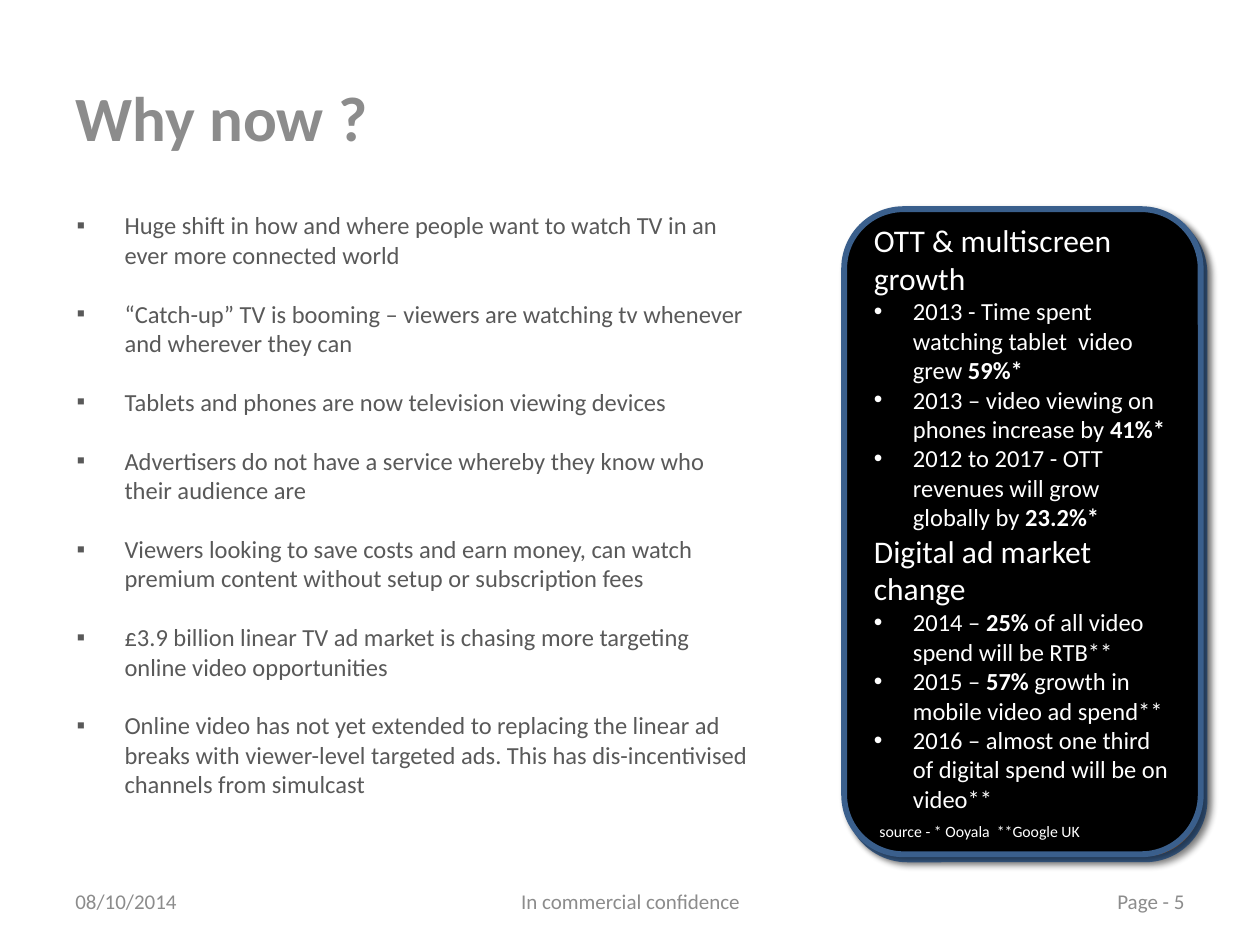
"""Build the 'Why now ?' slide: bullet list, black fact panel and footer."""
from lxml import etree
from pptx import Presentation, util as u
from pptx.dml.color import RGBColor
from pptx.enum import shapes, text
from pptx.oxml import parse_xml
from pptx.oxml.ns import nsdecls, qn

COLORS = {"title": "8C8C8C", "body": "595959", "panel": "000000",
          "back": "E46C0A", "edge": "3A5F8C", "light": "FFFFFF"}
COLS, ROWS = 100, 75
LEFT, CENTER, RIGHT = text.PP_ALIGN.LEFT, text.PP_ALIGN.CENTER, text.PP_ALIGN.RIGHT
MIDDLE, TOP = text.MSO_ANCHOR.MIDDLE, text.MSO_ANCHOR.TOP

prs = Presentation()
prs.slide_width, prs.slide_height = u.Inches(10), u.Inches(7.5)
s = prs.slides.add_slide(prs.slide_layouts[5])


def grid(col, row, width, height):
    """Turn columns and rows into left, top, width and height."""
    x, y = prs.slide_width / COLS, prs.slide_height / ROWS
    return [u.Emu(round(n)) for n in (col * x, row * y, width * x, height * y)]


def write(tf, lines, color, anchor=TOP, align=LEFT, before=0, after=0):
    """Fill a frame with (text, size, bullet, indent) lines; bars switch bold."""
    frame = {"word_wrap": True, "auto_size": text.MSO_AUTO_SIZE.NONE,
             "vertical_anchor": anchor}
    for key, value in frame.items():
        setattr(tf, key, value)
    for i, (line, size, bullet, indent) in enumerate(lines):
        p = tf.add_paragraph() if i else tf.paragraphs[0]
        if bullet:
            pPr = p._p.get_or_add_pPr()
            pPr.set("marL", str(u.Inches(indent)))
            pPr.set("indent", str(-u.Inches(indent)))
            etree.SubElement(pPr, qn("a:buFont"), typeface="Arial")
            etree.SubElement(pPr, qn("a:buChar"), char=bullet)
        spacing = {"alignment": align, "space_before": u.Pt(before if i else 0),
                   "space_after": u.Pt(after)}
        for key, value in spacing.items():
            setattr(p, key, value)
        for j, part in enumerate(line.split("|")):
            if part:
                r = p.add_run()
                r.text = part
                style = {"name": "Calibri", "size": u.Pt(size), "bold": j % 2 == 1}
                for key, value in style.items():
                    setattr(r.font, key, value)
                r.font.color.rgb = RGBColor.from_string(COLORS[color])


title = s.shapes.title
title.left, title.top, title.width, title.height = grid(5, 3, 60, 12.5)
write(title.text_frame, [("|Why now ?", 36, None, 0)], "title", MIDDLE)

reasons = [
    "Huge shift in how and where people want to watch TV in an ever more connected world",
    "“Catch-up” TV is booming – viewers are watching tv whenever and wherever they can",
    "Tablets and phones are now television viewing devices",
    "Advertisers do not have a service whereby they know who their audience are",
    "Viewers looking to save costs and earn money, can watch premium content without setup "
    "or subscription fees",
    "£3.9 billion linear TV ad market is chasing more targeting online video opportunities",
    "Online video has not yet extended to replacing the linear ad breaks with viewer-level "
    "targeted ads. This has dis-incentivised channels from simulcast",
]
body = s.shapes.add_textbox(*grid(5.1, 16.2, 55.9, 52))
write(body.text_frame, [(line, 14, "▪", 0.38) for line in reasons], "body",
      before=2.8, after=14)

for col, row, fill in [(67.3, 17, "back"), (67, 16.6, "panel")]:
    sp = s.shapes.add_shape(shapes.MSO_SHAPE.ROUNDED_RECTANGLE, *grid(col, row, 28.3, 51.2))
    sp.fill.solid()
    sp.fill.fore_color.rgb = RGBColor.from_string(COLORS[fill])
    sp.line.color.rgb = RGBColor.from_string(COLORS["edge"])
    sp.line.width = u.Pt(3.35)
    sp._element.spPr.append(parse_xml(
        f'<a:effectLst {nsdecls("a")}><a:outerShdw blurRad="{u.Pt(4)}" dist="{u.Pt(3)}" '
        'dir="2700000" algn="tl" rotWithShape="0"><a:srgbClr val="000000">'
        '<a:alpha val="40000"/></a:srgbClr></a:outerShdw></a:effectLst>'))

facts = {
    "OTT & multiscreen growth": [
        "2013 - Time spent watching tablet  video  grew |59%*",
        "2013 – video viewing on phones increase by |41%*",
        "2012 to 2017 - OTT revenues will grow globally by |23.2%*"],
    "Digital ad market change": [
        "2014 – |25%| of all video spend will be RTB**",
        "2015 – |57% |growth in mobile video ad spend**",
        "2016 – almost one third of digital spend will be on video**"],
}
lines = []
for heading, points in facts.items():
    lines.append((heading, 18, None, 0))
    lines += [(point, 14, "•", 0.31) for point in points]
lines.append((" ", 14, None, 0))
write(sp.text_frame, lines, "light", MIDDLE)
r = sp.text_frame.paragraphs[-1].add_run()
r.text = "source - * Ooyala  **Google UK"
for key, value in {"name": "Calibri", "size": u.Pt(9), "bold": False}.items():
    setattr(r.font, key, value)
r.font.color.rgb = RGBColor.from_string(COLORS["light"])

footer = [("08/10/2014", 5, 23.3, LEFT), ("In commercial confidence", 34.2, 31.7, CENTER),
          ("Page - 5", 71.7, 23.3, RIGHT)]
for label, col, width, align in footer:
    box = s.shapes.add_textbox(*grid(col, 69.5, width, 4))
    write(box.text_frame, [(label, 12, None, 0)], "title", MIDDLE, align)

prs.save("out.pptx")
